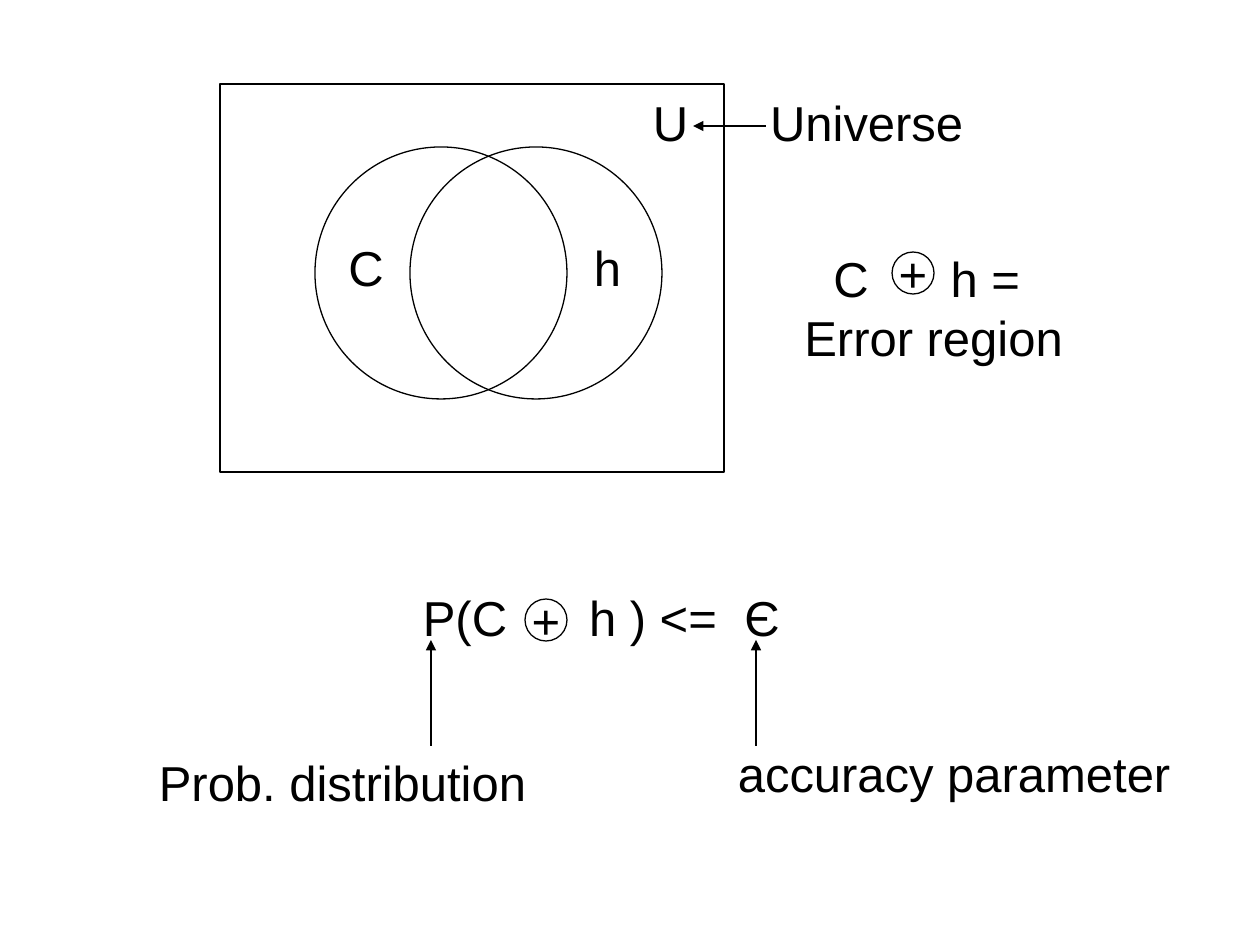
from lxml.etree import SubElement
from pptx import Presentation
from pptx.dml.color import RGBColor
from pptx.enum.shapes import MSO_CONNECTOR, MSO_SHAPE
from pptx.enum.text import MSO_ANCHOR, PP_ALIGN
from pptx.oxml.ns import qn
from pptx.util import Emu, Pt

PX = 914400 / 126
BLACK = RGBColor.from_string("000000")
SYMBOL_GAP = 39  # extra points in a space that leaves room for a symbol
SMALL_GAP = 8


def px(*lengths):
    """Turn pixel lengths into EMU."""
    return [Emu(round(n * PX)) for n in lengths]


def write(tf, lines, align=PP_ALIGN.CENTER):
    """Fill a frame; a number among a line's pieces is a space widened by that many points."""
    tf.word_wrap = False
    for i, pieces in enumerate(lines):
        p = tf.add_paragraph() if i else tf.paragraphs[0]
        p.alignment = align
        for piece in pieces:
            r = p.add_run()
            r.text = piece if isinstance(piece, str) else " "
            r.font.size = Pt(28)
            r.font.name = "Arial"
            r.font.color.rgb = BLACK
            if not isinstance(piece, str):
                r.font._element.set("spc", str(piece * 100))


prs = Presentation()
prs.slide_width, prs.slide_height = px(1260, 945)
s = prs.slides.add_slide(prs.slide_layouts[6])

# Venn diagram and the circled plus signs
outlines = [
    (MSO_SHAPE.OVAL, 410, 147, 252, 252, ""),
    (MSO_SHAPE.OVAL, 315, 147, 252, 252, ""),
    (MSO_SHAPE.RECTANGLE, 220, 84, 504, 388, ""),
    (MSO_SHAPE.OVAL, 525, 599, 42, 42, "+"),
    (MSO_SHAPE.OVAL, 892, 252, 42, 42, "+"),
]
for kind, x, y, w, h, sign in outlines:
    sp = s.shapes.add_shape(kind, *px(x, y, w, h))
    sp.shadow.inherit = False
    sp.fill.background()
    sp.line.color.rgb = BLACK
    sp.line.width = Pt(0.75)
    if sign:
        sp.text_frame.vertical_anchor = MSO_ANCHOR.MIDDLE
        write(sp.text_frame, [[sign]])

labels = [
    (336, 231, 60, 72, [["C"]], PP_ALIGN.CENTER),
    (581, 231, 53, 72, [["h"]], PP_ALIGN.CENTER),
    (640, 86, 336, 72, [["U", SYMBOL_GAP, "Universe"]], PP_ALIGN.CENTER),
    (791, 242, 285, 130, [["C", SYMBOL_GAP, "h = "], ["Error region"]], PP_ALIGN.CENTER),
    (410, 581, 382, 72, [["P(C", SYMBOL_GAP, "h ) <=", SMALL_GAP, "Є"]], PP_ALIGN.RIGHT),
    (724, 737, 460, 72, [["accuracy parameter"]], PP_ALIGN.CENTER),
    (146, 746, 393, 72, [["Prob. distribution"]], PP_ALIGN.CENTER),
]
for x, y, w, h, lines, align in labels:
    write(s.shapes.add_textbox(*px(x, y, w, h)).text_frame, lines, align)

arrows = [(766, 126, 693, 126), (431, 746, 431, 640), (756, 746, 756, 640)]
for ends in arrows:
    arrow = s.shapes.add_connector(MSO_CONNECTOR.STRAIGHT, *px(*ends))
    arrow.line.color.rgb = BLACK
    arrow.line.width = Pt(0.75)
    SubElement(arrow.line._get_or_add_ln(), qn("a:tailEnd"), type="triangle")
    SubElement(arrow._element.spPr, qn("a:effectLst"))

prs.save("out.pptx")
